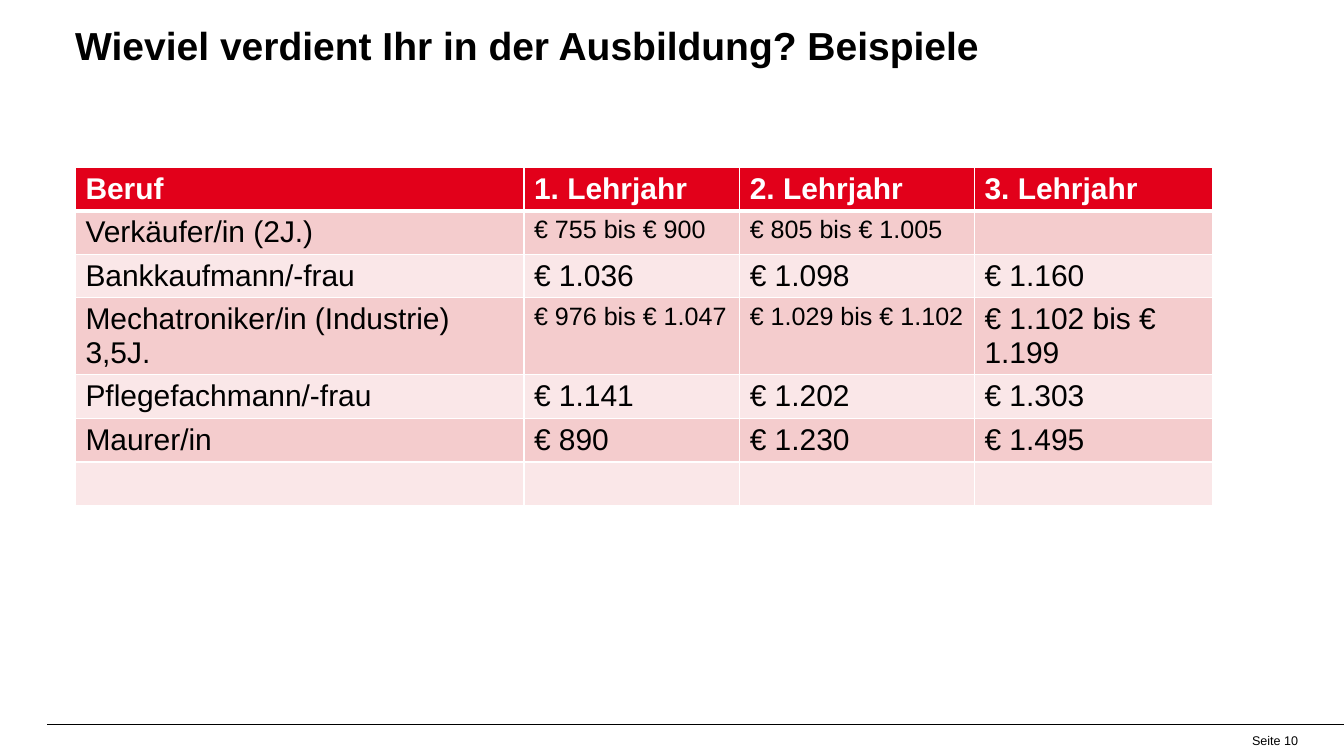
import pptx
import pptx.dml.color
import pptx.enum.shapes
import pptx.enum.text
import pptx.oxml
import pptx.oxml.ns
import pptx.util
from lxml import etree
from pptx.util import Cm, Pt

FONT = "Arial"
COLORS = {
    "text": "000000",
    "white": "FFFFFF",
    "header": "E2001A",
    "odd_row": "F4CCCD",
    "even_row": "FAE7E8",
}
COLUMN_WIDTHS = [11.35, 5.46, 5.94, 6.02]
ROW_HEIGHT = 1.1
WAGES = [
    ["Beruf", "1. Lehrjahr", "2. Lehrjahr", "3. Lehrjahr"],
    ["Verkäufer/in (2J.)", "€ 755 bis € 900", "€ 805 bis € 1.005", ""],
    ["Bankkaufmann/-frau", "€ 1.036", "€ 1.098", "€ 1.160"],
    ["Mechatroniker/in (Industrie) 3,5J.", "€ 976 bis € 1.047",
     "€ 1.029 bis € 1.102", "€ 1.102 bis € 1.199"],
    ["Pflegefachmann/-frau", "€ 1.141", "€ 1.202", "€ 1.303"],
    ["Maurer/in", "€ 890", "€ 1.230", "€ 1.495"],
    ["", "", "", ""],
]


def rgb(name):
    return pptx.dml.color.RGBColor.from_string(COLORS[name])


def format_paragraph(paragraph, size, color="text", bold=False):
    paragraph.font.name = FONT
    paragraph.font.size = Pt(size)
    paragraph.font.bold = bold
    paragraph.font.color.rgb = rgb(color)


def set_title(slide, text):
    title = slide.shapes.title
    title.left, title.top = Cm(1.65), Cm(0.41)
    title.width, title.height = Cm(31.17), Cm(2.39)
    frame = title.text_frame
    frame.text = text
    frame.vertical_anchor = pptx.enum.text.MSO_ANCHOR.TOP
    frame.paragraphs[0].alignment = pptx.enum.text.PP_ALIGN.LEFT
    format_paragraph(frame.paragraphs[0], 28, bold=True)


def set_borders(cell, bottom_width):
    properties = cell._tc.get_or_add_tcPr()
    widths = {"lnL": 1, "lnR": 1, "lnT": 1, "lnB": bottom_width}
    for tag, width in widths.items():
        line = etree.SubElement(properties, pptx.oxml.ns.qn(f"a:{tag}"), w=str(Pt(width)))
        fill = etree.SubElement(line, pptx.oxml.ns.qn("a:solidFill"))
        etree.SubElement(fill, pptx.oxml.ns.qn("a:srgbClr"), val=COLORS["white"])


def fill_cell(cell, text, row, column):
    is_header = row == 0
    set_borders(cell, 3 if is_header else 1)
    cell.fill.solid()
    cell.fill.fore_color.rgb = rgb(
        "header" if is_header else "odd_row" if row % 2 else "even_row")
    cell.text = text
    # Wage ranges are smaller in the first two years
    size = 18 if "bis" in text and column < 3 else 21.5
    format_paragraph(cell.text_frame.paragraphs[0], size,
                     "white" if is_header else "text", is_header)


def add_wage_table(slide):
    table = slide.shapes.add_table(
        len(WAGES), len(COLUMN_WIDTHS), Cm(1.91), Cm(4.23),
        Cm(sum(COLUMN_WIDTHS)), Cm(ROW_HEIGHT * len(WAGES))).table
    for column, width in zip(table.columns, COLUMN_WIDTHS):
        column.width = Cm(width)
    for row, texts in enumerate(WAGES):
        table.rows[row].height = Cm(ROW_HEIGHT)
        for column, text in enumerate(texts):
            fill_cell(table.cell(row, column), text, row, column)


def add_footer(slide, text):
    line = slide.shapes.add_connector(
        pptx.enum.shapes.MSO_CONNECTOR.STRAIGHT,
        Cm(1.19), Cm(18.34), Cm(34.01), Cm(18.34))
    line.line.color.rgb = rgb("text")
    line.line.width = Pt(0.5)
    etree.SubElement(line._element.spPr, pptx.oxml.ns.qn("a:effectLst"))

    frame = slide.shapes.add_textbox(Cm(30.71), Cm(18.4), Cm(2.39), Cm(0.7)).text_frame
    frame.word_wrap = True
    frame.vertical_anchor = pptx.enum.text.MSO_ANCHOR.MIDDLE
    frame.text = text
    frame.paragraphs[0].alignment = pptx.enum.text.PP_ALIGN.RIGHT
    format_paragraph(frame.paragraphs[0], 9)


def main():
    presentation = pptx.Presentation()
    presentation.slide_width, presentation.slide_height = Cm(34.01), Cm(19.13)
    slide = presentation.slides.add_slide(presentation.slide_layouts[5])
    set_title(slide, "Wieviel verdient Ihr in der Ausbildung? Beispiele")
    add_wage_table(slide)
    add_footer(slide, "Seite 10")
    presentation.save("out.pptx")


if __name__ == "__main__":
    main()
